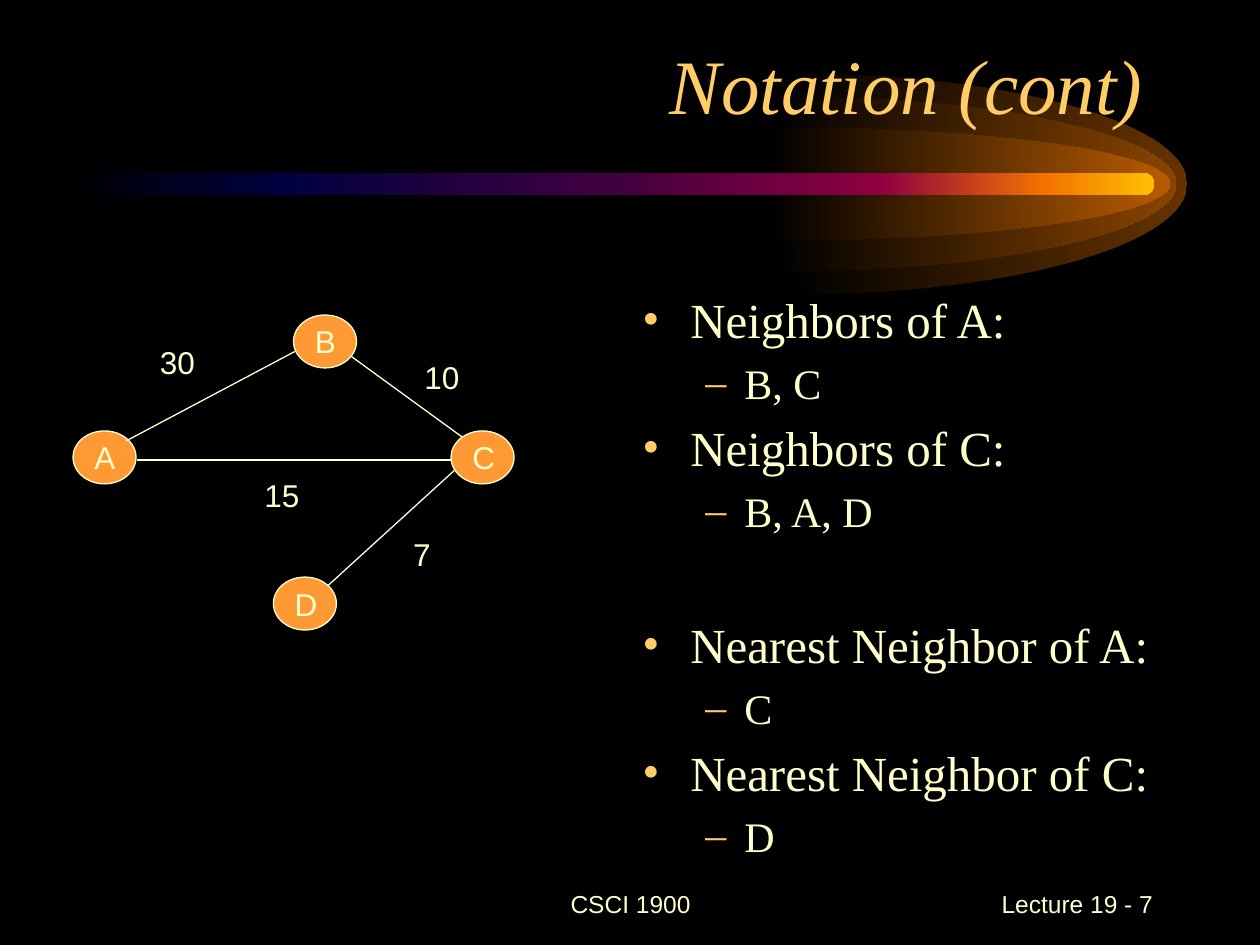
import pptx
import pptx.util
import pptx.dml.color
import pptx.enum.shapes
import pptx.enum.text
import pptx.oxml.ns
from lxml import etree

W, H = 10, 7.5
CREAM, GOLD, ORANGE = "FFFFCC", "FFCC66", "FF9933"
SANS, SERIF = "Arial", "Times New Roman"

# Content
TITLE = "Notation (cont)"
FOOTERS = [("CSCI 1900", 3.42, 3.17, "CENTER"), ("Lecture 19 - 7", 7.17, 2.08, "RIGHT")]
FACTS = [  # heading, answer, space before in points
    ("Neighbors of A:", "B, C", 5.8),
    ("Neighbors of C:", "B, A, D", 5.8),
    ("Nearest Neighbor of A:", "C", 45.4),
    ("Nearest Neighbor of C:", "D", 5.8),
]
NODE_W, NODE_H = 0.5, 0.42
NODES = {"A": (0.58, 3.42), "B": (2.33, 2.5), "C": (3.58, 3.42), "D": (2.17, 4.58)}
EDGES = [  # start, end, weight, weight's place
    ((1, 3.5), (2.34, 2.79), "30", (1.17, 2.67)),
    ((2.79, 2.83), (3.67, 3.47), "10", (3.27, 2.79)),
    ((1.09, 3.65), (3.59, 3.65), "15", (2, 3.73)),
    ((2.6, 4.65), (3.61, 3.73), "7", (3.18, 4.2)),
]
# Comet: centre x, half height, colour of each glow, all on one axis
AXIS_Y, GLOW_RX = 1.46, 3.13
ARC = 0.55  # control point share of a quarter ellipse
GLOWS = [(6.29, 0.875, "663300"), (6.21, 0.695, "894400"), (6.16, 0.45, "B75B00")]
TAIL = [(0, "000000"), (20, "000040"), (50, "400040"),
        (75, "8F0040"), (90, "F27300"), (100, "FFBF00")]

inch, pt, qn = pptx.util.Inches, pptx.util.Pt, pptx.oxml.ns.qn
MSO = pptx.enum.shapes.MSO_SHAPE
ALIGN, ANCHOR = pptx.enum.text.PP_ALIGN, pptx.enum.text.MSO_ANCHOR


def rgb(color):
    return pptx.dml.color.RGBColor.from_string(color)


def gradient(sp, stops):
    sp.shadow.inherit = False
    sp.line.fill.background()
    sp.fill.gradient()
    sp.fill.gradient_angle = 0
    stop_list = sp._element.spPr.find(".//" + qn("a:gsLst"))
    for old in list(stop_list):
        stop_list.remove(old)
    for share, color in stops:
        stop = etree.SubElement(stop_list, qn("a:gs"), pos=str(share * 1000))
        etree.SubElement(stop, qn("a:srgbClr"), val=color)


def text_frame(s, x, y, w, h, anchor="TOP"):
    tf = s.shapes.add_textbox(inch(x), inch(y), inch(w), inch(h)).text_frame
    tf.word_wrap = True
    tf.vertical_anchor = ANCHOR[anchor]
    return tf


def write(p, text, size, font=SANS, color=CREAM, align="LEFT", italic=False):
    p.alignment = ALIGN[align]
    r = p.add_run()
    r.text = text
    r.font.size, r.font.name, r.font.italic = pt(size), font, italic
    r.font.color.rgb = rgb(color)


def bullet(p, char, left, hang):
    pPr = p._p.get_or_add_pPr()
    pPr.set("marL", str(inch(left)))
    pPr.set("indent", str(-inch(hang)))
    bu_color = etree.SubElement(pPr, qn("a:buClr"))
    etree.SubElement(bu_color, qn("a:srgbClr"), val=GOLD)
    etree.SubElement(pPr, qn("a:buFont"), typeface=SERIF)
    etree.SubElement(pPr, qn("a:buChar"), char=char)


def curve(sp, count):
    """Turn the first 3 * count line segments into cubic curves."""
    lines = sp._element.spPr.findall(".//" + qn("a:lnTo"))
    for i in range(0, 3 * count, 3):
        first, *rest = lines[i:i + 3]
        cubic = etree.Element(qn("a:cubicBezTo"))
        first.addprevious(cubic)
        for line in (first, *rest):
            cubic.append(line[0])
            line.getparent().remove(line)


def add_comet(s):
    # Half ellipse in units of its radii: two quarter arcs
    half = [(0, -1), (ARC, -1), (1, -ARC), (1, 0), (1, ARC), (ARC, 1), (0, 1)]
    for cx, ry, color in GLOWS:
        points = [(cx + u * GLOW_RX, AXIS_Y + v * ry) for u, v in half]
        points += [(cx - 0.05, AXIS_Y + ry), (cx, AXIS_Y)]
        emu = [(inch(x), inch(y)) for x, y in points]
        fb = s.shapes.build_freeform(*emu[0])
        fb.add_line_segments(emu[1:], close=True)
        sp = fb.convert_to_shape()
        curve(sp, 2)
        gradient(sp, [(0, "000000"), (100, color)])
    bar = s.shapes.add_shape(MSO.ROUNDED_RECTANGLE, inch(0.5), inch(AXIS_Y - 0.09),
                             inch(8.66), inch(0.18))
    bar.adjustments[0] = 0.5
    gradient(bar, TAIL)


def add_graph(s):
    for x, y in NODES.values():
        sp = s.shapes.add_shape(MSO.OVAL, inch(x), inch(y), inch(NODE_W), inch(NODE_H))
        sp.shadow.inherit = False
        sp.fill.solid()
        sp.fill.fore_color.rgb = rgb(ORANGE)
        sp.line.color.rgb = rgb(CREAM)
        sp.line.width = pt(0.75)
    for start, end, weight, place in EDGES:
        line = s.shapes.add_connector(pptx.enum.shapes.MSO_CONNECTOR.STRAIGHT,
                                      *[inch(v) for v in start + end])
        line.line.color.rgb = rgb(CREAM)
        line.line.width = pt(0.75)
        etree.SubElement(line._element.spPr, qn("a:effectLst"))
        write(text_frame(s, *place, 0.5, 0.4).paragraphs[0], weight, 18)
    for name, (x, y) in NODES.items():
        write(text_frame(s, x + 0.07, y + 0.01, 0.58, 0.4).paragraphs[0], name, 18)


def add_facts(s):
    tf = text_frame(s, W / 2, 0.3 * H, 4.75, 4.92)
    p = tf.paragraphs[0]
    for i, (heading, answer, gap) in enumerate(FACTS):
        if i:
            p = tf.add_paragraph()
        p.space_before = pt(gap)
        bullet(p, "•", 0.38, 0.38)
        write(p, heading, 28, SERIF)
        p = tf.add_paragraph()
        p.level = 1
        p.space_before = pt(4.9)
        bullet(p, "–", 0.81, 0.31)
        write(p, answer, 24, SERIF)


def main():
    prs = pptx.Presentation()
    prs.slide_width, prs.slide_height = inch(W), inch(H)
    s = prs.slides.add_slide(prs.slide_layouts[6])
    s.background.fill.solid()
    s.background.fill.fore_color.rgb = rgb("000000")

    add_comet(s)
    # Footers and title
    for text, x, w, align in FOOTERS:
        write(text_frame(s, x, 6.92, w, 0.5, "MIDDLE").paragraphs[0], text, 14, align=align)
    tf = text_frame(s, 0.67, 0.25, 8.5, 0.83, "BOTTOM")
    write(tf.paragraphs[0], TITLE, 44, SERIF, GOLD, "RIGHT", True)
    add_facts(s)
    add_graph(s)
    prs.save("out.pptx")


if __name__ == "__main__":
    main()
